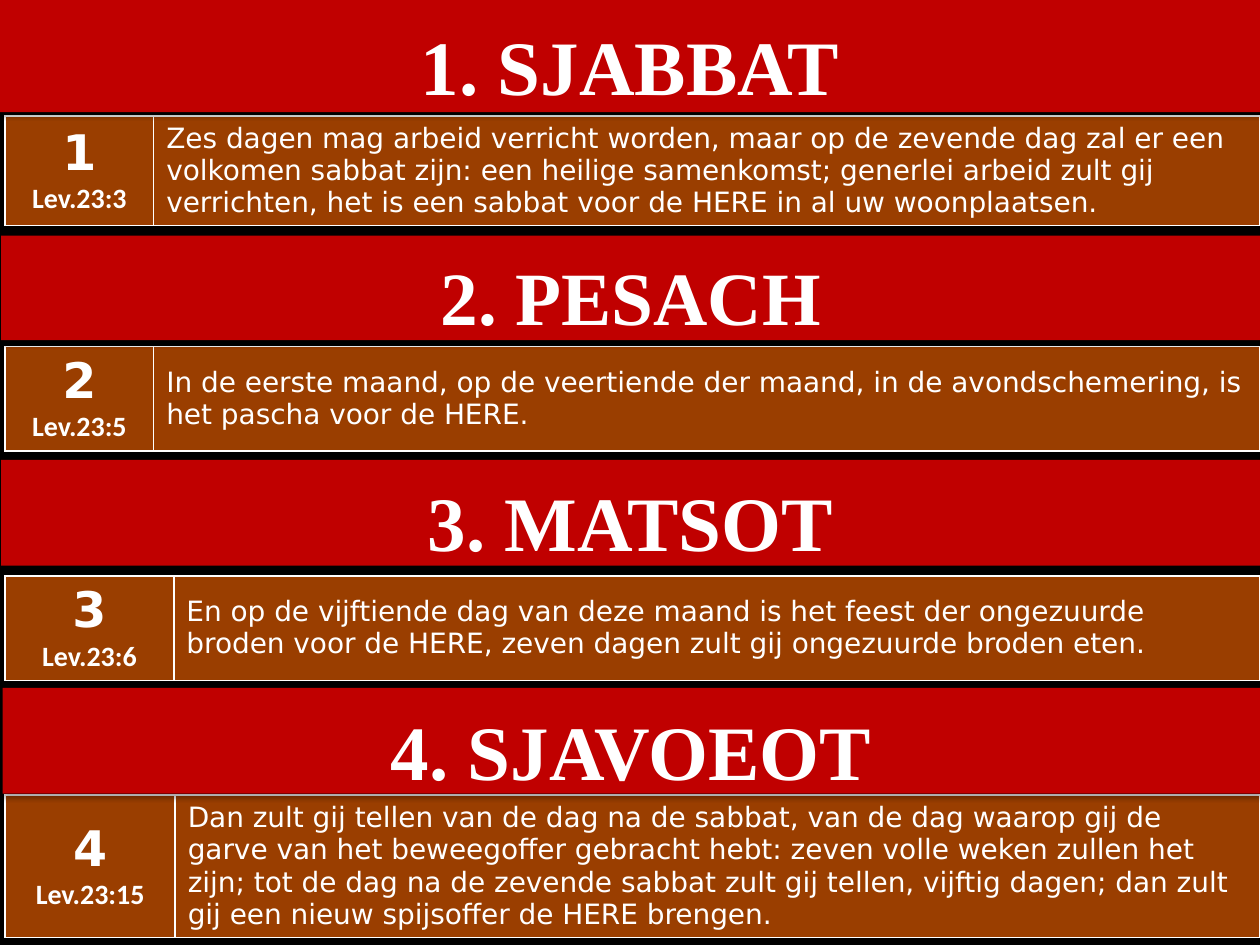
"""Builds a slide of four feasts, each with a title bar and a verse table."""
from typing import NamedTuple

from lxml import etree
from pptx import Presentation
from pptx.dml.color import RGBColor
from pptx.enum import shapes, text
from pptx.oxml.ns import qn
from pptx.util import Inches, Pt

COLORS = {"back": "000000", "bar": "C00000", "cell": "9A3E00", "ink": "FFFFFF"}
TABLE_LEFT, TABLE_WIDTH = 0.04, 9.96


class Feast(NamedTuple):
    title: str
    bar: tuple[float, float, float, float]
    inset: float
    size: int
    ref: str
    verse: str
    top: float
    height: float
    ref_width: float


FEASTS = [
    Feast("SJABBAT", (0, 0, 10, 0.89), 0.15, 44, "Lev.23:3",
          "Zes dagen mag arbeid verricht worden, maar op de zevende dag zal er een "
          "volkomen sabbat zijn: een heilige samenkomst; generlei arbeid zult gij "
          "verrichten, het is een sabbat voor de HERE in al uw woonplaatsen.",
          0.92, 0.87, 1.18),
    Feast("PESACH", (0.01, 1.87, 9.99, 0.83), 0.12, 43, "Lev.23:5",
          "In de eerste maand, op de veertiende der maand, in de avondschemering, "
          "is het pascha voor de HERE.",
          2.75, 0.83, 1.18),
    Feast("MATSOT", (0.01, 3.65, 9.99, 0.84), 0.12, 44, "Lev.23:6",
          "En op de vijftiende dag van deze maand is het feest der ongezuurde "
          "broden voor de HERE, zeven dagen zult gij ongezuurde broden eten.",
          4.57, 0.83, 1.34),
    Feast("SJAVOEOT", (0.02, 5.46, 9.98, 0.84), 0.12, 44, "Lev.23:15",
          "Dan zult gij tellen van de dag na de sabbat, van de dag waarop gij de "
          "garve van het beweegoffer gebracht hebt: zeven volle weken zullen het "
          "zijn; tot de dag na de zevende sabbat zult gij tellen, vijftig dagen; "
          "dan zult gij een nieuw spijsoffer de HERE brengen.",
          6.31, 1.13, 1.35),
]


def rgb(name: str) -> RGBColor:
    return RGBColor.from_string(COLORS[name])


def paint(obj, name: str) -> None:
    obj.fill.solid()
    obj.fill.fore_color.rgb = rgb(name)


def write(p, words: str, *, font: str, size: int, bold: bool = True,
          align=text.PP_ALIGN.CENTER) -> None:
    p.alignment = align
    r = p.add_run()
    r.text = words
    r.font.name, r.font.size, r.font.bold = font, Pt(size), bold
    r.font.color.rgb = rgb("ink")


def add_shadow(sp) -> None:
    effects = etree.SubElement(sp.element.spPr, qn("a:effectLst"))
    shadow = etree.SubElement(effects, qn("a:outerShdw"), blurRad=str(Pt(3.1)),
                              dist=str(Pt(1.8)), dir="5400000", rotWithShape="0")
    color = etree.SubElement(shadow, qn("a:srgbClr"), val="000000")
    etree.SubElement(color, qn("a:alpha"), val="35000")


def add_borders(cell) -> None:
    tc_pr = cell._tc.get_or_add_tcPr()
    for i, side in enumerate(("lnL", "lnR", "lnT", "lnB")):
        ln = etree.Element(qn(f"a:{side}"), w=str(Pt(1)))
        fill = etree.SubElement(ln, qn("a:solidFill"))
        etree.SubElement(fill, qn("a:srgbClr"), val=COLORS["ink"])
        tc_pr.insert(i, ln)


def draw_table(s, number: int, feast: Feast) -> None:
    frame = s.shapes.add_table(1, 2, Inches(TABLE_LEFT), Inches(feast.top),
                               Inches(TABLE_WIDTH), Inches(feast.height))
    table = frame.table
    table.columns[0].width = Inches(feast.ref_width)
    table.columns[1].width = Inches(TABLE_WIDTH - feast.ref_width)
    ref, verse = table.cell(0, 0), table.cell(0, 1)
    for cell in (ref, verse):
        cell.vertical_anchor = text.MSO_ANCHOR.MIDDLE
        paint(cell, "cell")
        add_borders(cell)
    tf = ref.text_frame
    write(tf.paragraphs[0], str(number), font="DejaVu Sans", size=28)
    write(tf.add_paragraph(), feast.ref, font="Calibri", size=16)
    write(verse.text_frame.paragraphs[0], feast.verse, font="DejaVu Sans",
          size=16, bold=False, align=text.PP_ALIGN.LEFT)


def draw_bar(sp, number: int, feast: Feast) -> None:
    sp.left, sp.top, sp.width, sp.height = map(Inches, feast.bar)
    paint(sp, "bar")
    sp.line.fill.background()
    add_shadow(sp)
    tf = sp.text_frame
    tf.word_wrap = True
    tf.auto_size = text.MSO_AUTO_SIZE.NONE
    tf.vertical_anchor = text.MSO_ANCHOR.TOP
    tf.margin_top, tf.margin_bottom = Inches(feast.inset), 0
    write(tf.paragraphs[0], f"{number}. {feast.title}",
          font="Times New Roman", size=feast.size)


def main() -> None:
    prs = Presentation()
    prs.slide_width, prs.slide_height = Inches(10), Inches(7.5)
    s = prs.slides.add_slide(prs.slide_layouts[5])
    paint(s.background, "back")
    for number, feast in enumerate(FEASTS, 1):
        draw_table(s, number, feast)
    title = s.shapes.title
    s.shapes.element.append(title.element)
    for number, feast in enumerate(FEASTS, 1):
        sp = title if number == 1 else s.shapes.add_shape(
            shapes.MSO_SHAPE.RECTANGLE, *map(Inches, feast.bar))
        draw_bar(sp, number, feast)
    prs.save("out.pptx")


if __name__ == "__main__":
    main()
